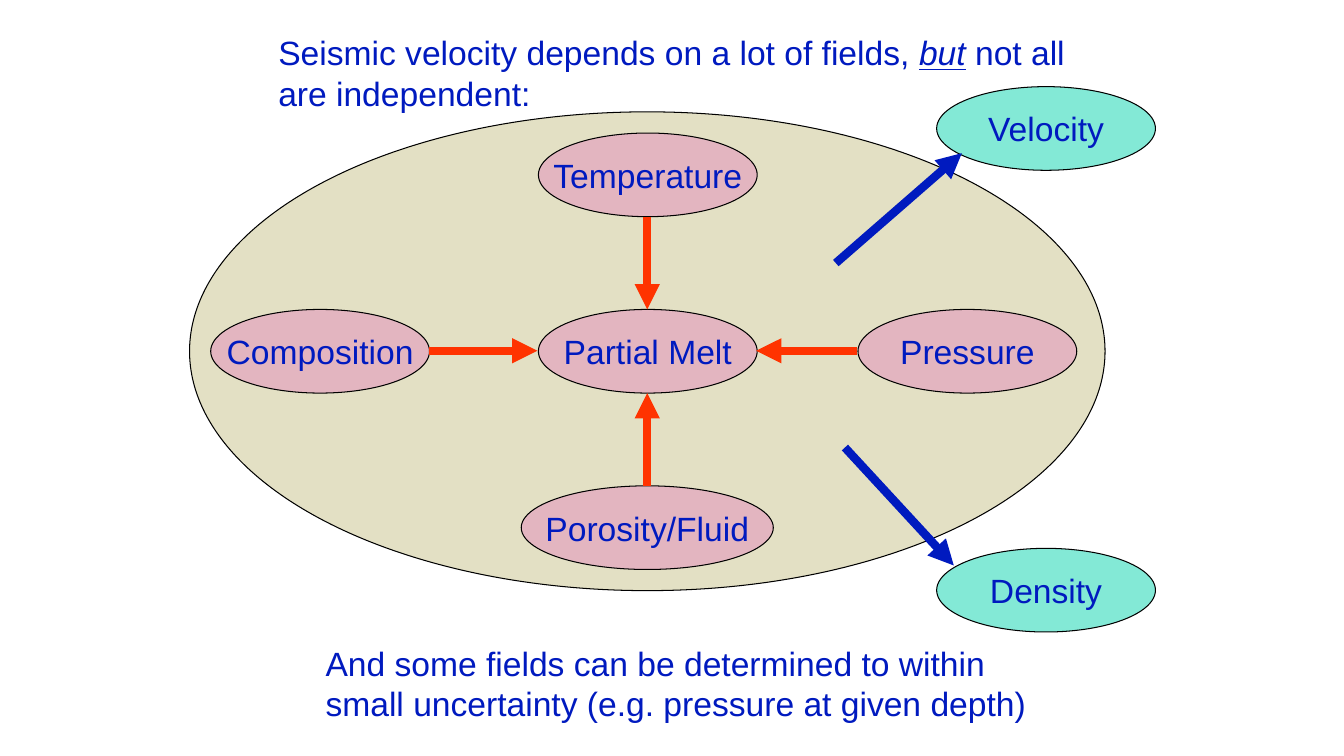
from lxml import etree
from pptx import Presentation
from pptx import util as u
from pptx.dml.color import RGBColor
from pptx.enum import shapes, text
from pptx.oxml.ns import qn

PX = 9144
COLORS = {
    "text": "001ABF",
    "outline": "000000",
    "region": "E3E0C4",
    "field": "E3B5C0",
    "result": "83E9D6",
    "influence": "FF3300",
    "outcome": "001ABF",
}
OVAL_WIDTH, OVAL_HEIGHT = 217, 83
CENTER_X, CENTER_Y = 642, 348
ROW_GAP = 175


def color(name):
    return RGBColor.from_string(COLORS[name])


def style_paragraph(para, alignment):
    para.alignment = alignment
    para.font.size = u.Pt(24)
    para.font.name = "Arial"
    para.font.color.rgb = color("text")


def add_oval(page, left, top, width, height, fill, label=None):
    oval = page.shapes.add_shape(
        shapes.MSO_SHAPE.OVAL, left * PX, top * PX, width * PX, height * PX)
    oval.shadow.inherit = False
    oval.fill.solid()
    oval.fill.fore_color.rgb = color(fill)
    oval.line.color.rgb = color("outline")
    oval.line.width = u.Pt(0.75)
    if label:
        frame = oval.text_frame
        frame.word_wrap = False
        frame.vertical_anchor = text.MSO_ANCHOR.MIDDLE
        para = frame.paragraphs[0]
        para.text = label
        style_paragraph(para, text.PP_ALIGN.CENTER)


def add_arrow(page, start, end, stroke):
    arrow = page.shapes.add_connector(
        shapes.MSO_CONNECTOR.STRAIGHT, *(value * PX for value in start + end))
    arrow.line.color.rgb = color(stroke)
    arrow.line.width = u.Pt(6)
    etree.SubElement(arrow.line._get_or_add_ln(), qn("a:tailEnd"), type="triangle")
    etree.SubElement(arrow._element.spPr, qn("a:effectLst"))


def write_lines(box, left, top, width, lines):
    box.left, box.top, box.width, box.height = (
        value * PX for value in (left, top, width, 91))
    frame = box.text_frame
    frame.word_wrap = True
    frame.auto_size = text.MSO_AUTO_SIZE.NONE
    frame.vertical_anchor = text.MSO_ANCHOR.TOP
    for index, pieces in enumerate(lines):
        para = frame.add_paragraph() if index else frame.paragraphs[0]
        style_paragraph(para, text.PP_ALIGN.LEFT)
        for words, stressed in pieces:
            span = para.add_run()
            span.text = words
            if stressed:
                span.font.italic = True
                span.font.underline = True


def main():
    deck = Presentation()
    deck.slide_width, deck.slide_height = 1333 * PX, 750 * PX
    page = deck.slides.add_slide(deck.slide_layouts[5])

    write_lines(page.shapes.title, 266, 27, 817, [
        [("Seismic velocity depends on a lot of fields, ", False),
         ("but", True), (" not all", False)],
        [("are independent:", False)],
    ])

    add_oval(page, 188, 111, 908, 475, "region")
    for label, center_x, center_y, width in [
        ("Partial Melt", CENTER_X, CENTER_Y, OVAL_WIDTH),
        ("Composition", 317, CENTER_Y, OVAL_WIDTH),
        ("Porosity/Fluid", CENTER_X, CENTER_Y + ROW_GAP, 250),
        ("Temperature", CENTER_X, CENTER_Y - ROW_GAP, OVAL_WIDTH),
        ("Pressure", 959, CENTER_Y, OVAL_WIDTH),
    ]:
        add_oval(page, center_x - width // 2, center_y - OVAL_HEIGHT // 2,
                 width, OVAL_HEIGHT, "field", label)

    for start, end in [
        ((CENTER_X, 215), (CENTER_X, 307)),
        ((850, CENTER_Y), (750, CENTER_Y)),
        ((CENTER_X, 482), (CENTER_X, 390)),
        ((425, CENTER_Y), (533, CENTER_Y)),
    ]:
        add_arrow(page, start, end, "influence")

    for label, top, start, end in [
        ("Density", 544, (838, 444), (946, 561)),
        ("Velocity", 86, (829, 261), (954, 152)),
    ]:
        add_oval(page, 929, top, OVAL_WIDTH, OVAL_HEIGHT, "result", label)
        add_arrow(page, start, end, "outcome")

    note = page.shapes.add_textbox(0, 0, PX, PX)
    write_lines(note, 313, 633, 722, [
        [("And some fields can be determined to within", False)],
        [("small uncertainty (e.g. pressure at given depth)", False)],
    ])
    deck.save("out.pptx")


if __name__ == "__main__":
    main()
